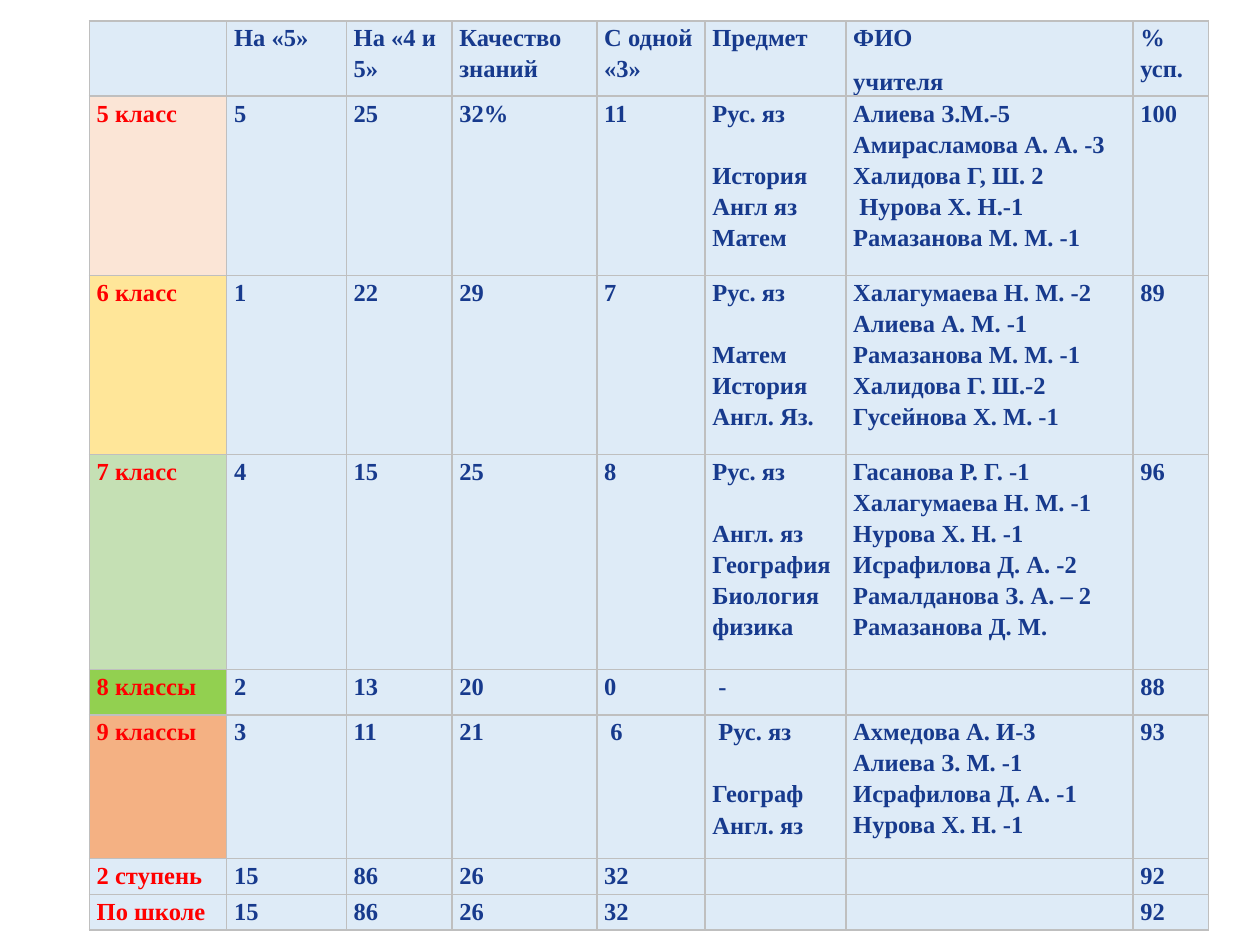
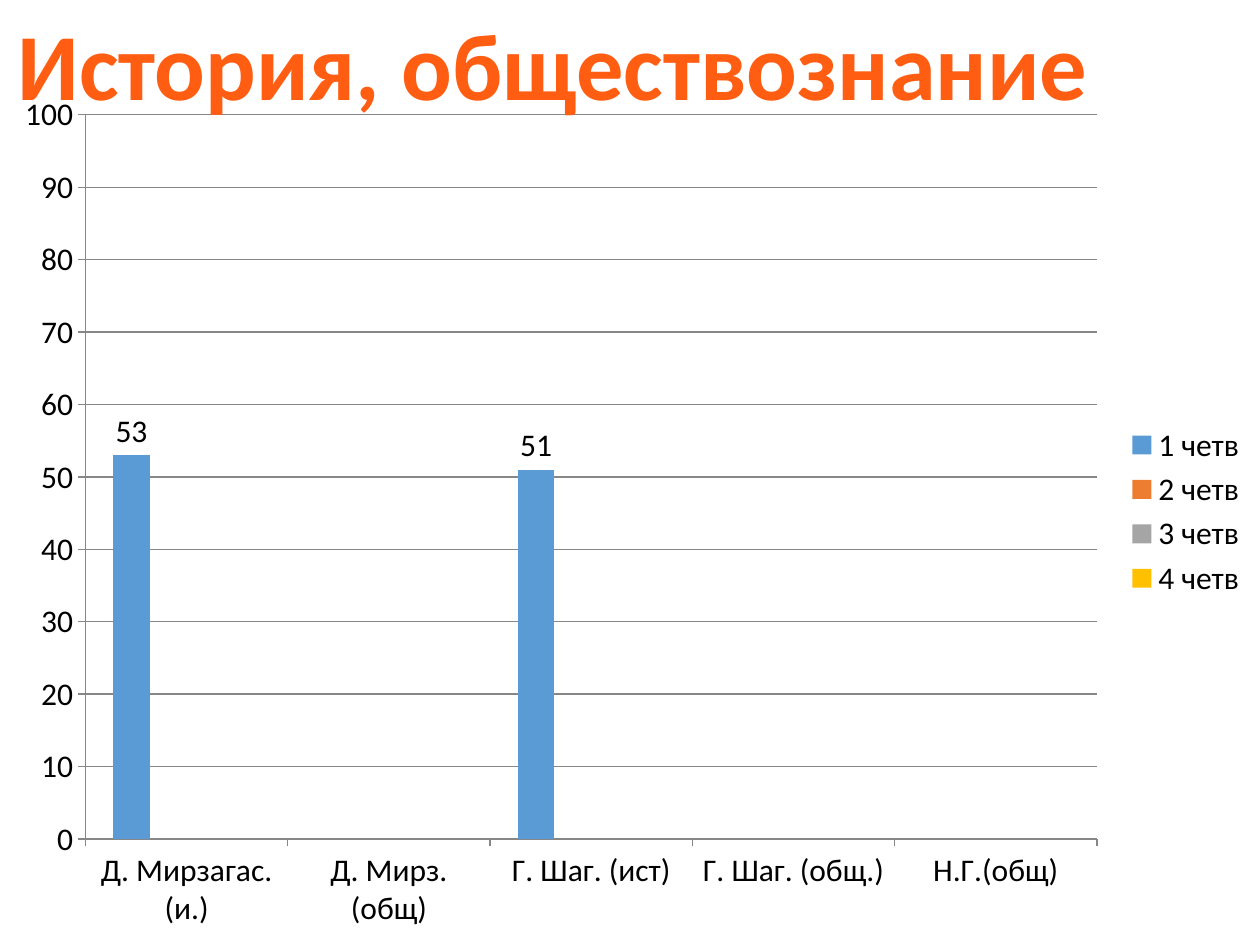
import lxml.etree
import pptx
import pptx.chart.data
import pptx.dml.color
import pptx.enum.chart
import pptx.enum.text
import pptx.oxml.ns
import pptx.util

Cm, Pt = pptx.util.Cm, pptx.util.Pt
rgb = pptx.dml.color.RGBColor.from_string
qn = pptx.oxml.ns.qn


class Theme:
    navy, red, orange = rgb("173A8D"), rgb("FF0000"), rgb("FF5D12")
    pale, grid, axis, black = rgb("DEEBF7"), "BFBFBF", rgb("878787"), rgb("000000")
    bars = [rgb(c) for c in ("5B9BD5", "ED7D31", "A5A5A5", "FFC000")]
    cell = {"name": "Times New Roman", "size": Pt(14), "bold": True}
    title = {"name": "Calibri", "size": Pt(54), "bold": True}
    chart = {"name": "Calibri", "size": Pt(18), "bold": False}


def put(item, values):
    """Set each attribute of item named in values."""
    for key, value in values.items():
        setattr(item, key, value)


def edge(cell):
    """Draw a thin grey line on all four sides of a cell."""
    props = cell._tc.get_or_add_tcPr()
    for spot, side in enumerate(("lnL", "lnR", "lnT", "lnB")):
        line = lxml.etree.Element(qn("a:" + side), w=str(Pt(1)))
        fill = lxml.etree.SubElement(line, qn("a:solidFill"))
        lxml.etree.SubElement(fill, qn("a:srgbClr"), val=Theme.grid)
        props.insert(spot, line)


deck = pptx.Presentation()
put(deck, {"slide_width": Cm(25.4), "slide_height": Cm(19.05)})

# Slide 1: results by class
widths = [2.77, 2.41, 2.13, 2.92, 2.18, 2.84, 5.79, 1.52]
heights = [1.35, 3.61, 3.61, 4.34, 0.91, 2.9, 0.72, 0.72]
tints = {1: "FBE5D6", 2: "FFE699", 3: "C5E0B4", 4: "92D050", 5: "F4B183"}
spaced = (0, 4)  # rows with space after each paragraph
rows = [
    ["", "На «5»", "На «4 и 5»", "Качество знаний", "С одной «3»",
     "Предмет", "ФИО\nучителя", "% усп."],
    ["5 класс", "5", "25", "32%", "11", "Рус. яз\nИстория\nАнгл яз\nМатем",
     "Алиева З.М.-5\nАмирасламова А. А. -3\nХалидова Г, Ш. 2\n"
     " Нурова Х. Н.-1\nРамазанова М. М. -1", "100"],
    ["6 класс", "1", "22", "29", "7", "Рус. яз\nМатем\nИстория\nАнгл. Яз.",
     "Халагумаева Н. М. -2\nАлиева А. М. -1\nРамазанова М. М. -1\n"
     "Халидова Г. Ш.-2\nГусейнова Х. М. -1", "89"],
    ["7 класс", "4", "15", "25", "8",
     "Рус. яз\nАнгл. яз\nГеография\nБиология\nфизика",
     "Гасанова Р. Г. -1\nХалагумаева Н. М. -1\nНурова Х. Н. -1\n"
     "Исрафилова Д. А. -2\nРамалданова З. А. – 2\nРамазанова Д. М.", "96"],
    ["8 классы", "2", "13", "20", "0", " -", "", "88"],
    ["9 классы", "3", "11", "21", " 6", " Рус. яз\nГеограф\nАнгл. яз",
     "Ахмедова А. И-3\nАлиева З. М. -1\nИсрафилова Д. А. -1\n"
     "Нурова Х. Н. -1", "93"],
    ["2 ступень", "15", "86", "26", "32", "", "", "92"],
    ["По школе", "15", "86", "26", "32", "", "", "92"],
]
slide = deck.slides.add_slide(deck.slide_layouts[6])
table = slide.shapes.add_table(
    len(rows), len(widths), Cm(1.8), Cm(0.42),
    Cm(sum(widths)), Cm(sum(heights))).table
for col, width in zip(table.columns, widths):
    col.width = Cm(width)
for row, height in zip(table.rows, heights):
    row.height = Cm(height)

for r, row in enumerate(rows):
    for c, text in enumerate(row):
        cell = table.cell(r, c)
        put(cell, {"margin_left": Cm(0.15), "margin_right": Cm(0.15),
                   "margin_top": 0, "margin_bottom": 0})
        cell.fill.solid()
        cell.fill.fore_color.rgb = rgb(tints[r]) if c == 0 and r in tints else Theme.pale
        edge(cell)
        cell.text_frame.text = text
        for n, para in enumerate(cell.text_frame.paragraphs):
            para.line_spacing = 1.15
            if r in spaced:
                para.space_after = Pt(7.5)
            elif c == 5 and n == 1:
                para.space_before = Pt(17.8)
            for run in para.runs:
                put(run.font, Theme.cell)
                run.font.color.rgb = Theme.navy if c else Theme.red
            if not text:
                size = str(Theme.cell["size"].centipoints)
                lxml.etree.SubElement(para._p, qn("a:endParaRPr"), sz=size)

# Slide 2: history and social studies
slide = deck.slides.add_slide(deck.slide_layouts[5])
data = pptx.chart.data.CategoryChartData()
data.categories = ["Д. Мирзагас. (и.)", "Д. Мирз. (общ)", "Г. Шаг. (ист)",
                   "Г. Шаг. (общ.)", "Н.Г.(общ)"]
data.add_series("1 четв", [53, None, 51, None, None])
for term in (2, 3, 4):
    data.add_series(f"{term} четв", [None] * 5)
chart = slide.shapes.add_chart(
    pptx.enum.chart.XL_CHART_TYPE.COLUMN_CLUSTERED,
    0, Cm(1.58), Cm(25.4), Cm(17.47), data).chart
put(chart, {"has_title": False, "has_legend": True})
put(chart.font, Theme.chart)
chart.font.color.rgb = Theme.black
put(chart.legend, {"position": pptx.enum.chart.XL_LEGEND_POSITION.RIGHT,
                   "include_in_layout": False})
plot = chart.plots[0]
put(plot, {"gap_width": 150, "overlap": 0, "vary_by_categories": False})
for bar, tint in zip(plot.series, Theme.bars):
    bar.invert_if_negative = False
    bar.format.fill.solid()
    bar.format.fill.fore_color.rgb = tint
    put(bar.data_labels, {
        "show_value": True,
        "position": pptx.enum.chart.XL_LABEL_POSITION.OUTSIDE_END})
scale = chart.value_axis
put(scale, {"minimum_scale": 0, "maximum_scale": 100, "major_unit": 10,
            "has_major_gridlines": True})
for axis in (scale, chart.category_axis):
    axis.major_tick_mark = pptx.enum.chart.XL_TICK_MARK.OUTSIDE
for part in (scale, chart.category_axis, scale.major_gridlines):
    part.format.line.width = Pt(0.75)
    part.format.line.color.rgb = Theme.axis

title = slide.shapes.title
put(title, {"left": 0, "top": 0, "width": Cm(22.3), "height": Cm(2.57)})
frame = title.text_frame
put(frame, {"text": "История, обществознание", "word_wrap": False,
            "auto_size": pptx.enum.text.MSO_AUTO_SIZE.SHAPE_TO_FIT_TEXT,
            "vertical_anchor": pptx.enum.text.MSO_ANCHOR.TOP})
para = frame.paragraphs[0]
para.alignment = pptx.enum.text.PP_ALIGN.CENTER
put(para.runs[0].font, Theme.title)
para.runs[0].font.color.rgb = Theme.orange
title.element.getparent().append(title.element)  # title in front of the chart

deck.save("out.pptx")
